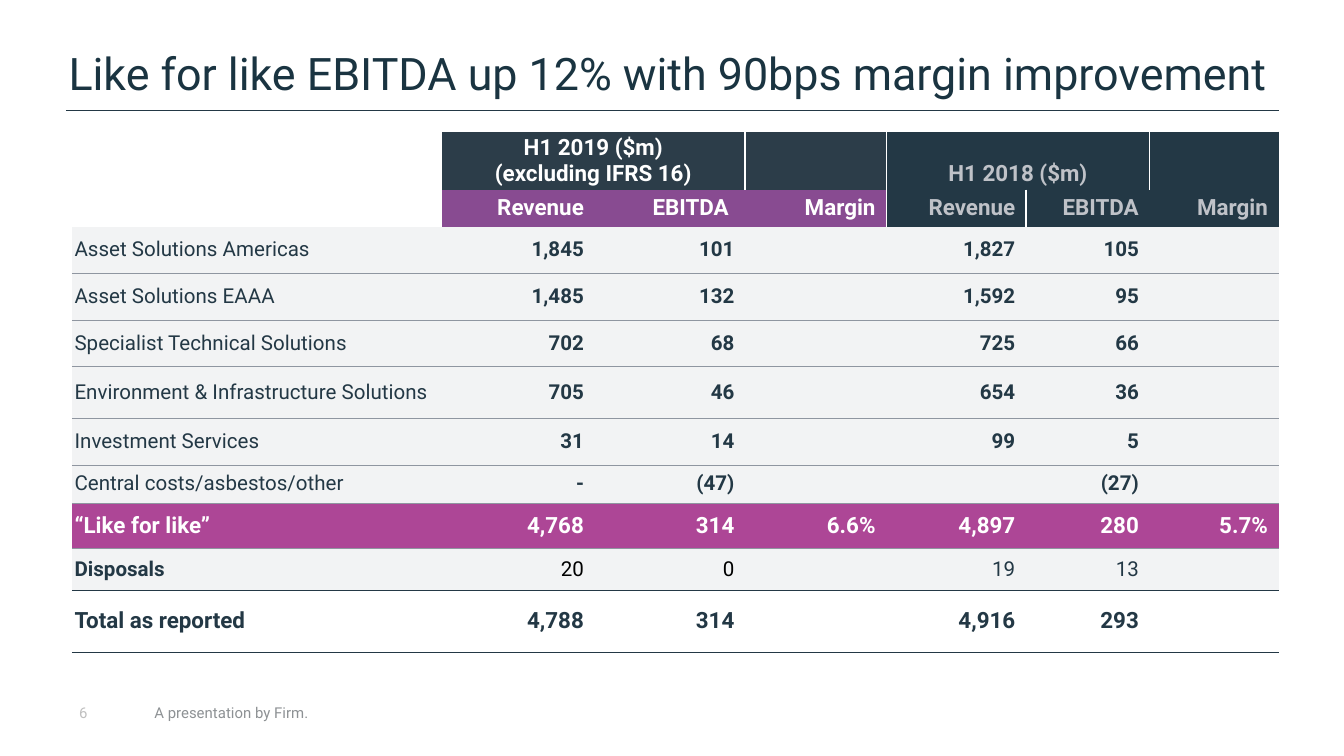
import dataclasses
import typing

import lxml.etree
import pptx
import pptx.dml.color
import pptx.enum.shapes
import pptx.enum.text
import pptx.oxml.ns
import pptx.util

ALIGN = pptx.enum.text.PP_ALIGN
ANCHOR = pptx.enum.text.MSO_ANCHOR
UNIT = pptx.util.Inches(0.1)
Box = tuple[float, float, float, float]


@dataclasses.dataclass(frozen=True)
class Theme:
    font: str = "Roboto"
    title: str = "1A3441"
    navy: str = "233845"
    slate: str = "2C3D49"
    purple: str = "884B91"
    magenta: str = "AD4696"
    pale: str = "F2F3F4"
    white: str = "FFFFFF"
    black: str = "000000"
    silver: str = "BFC2C8"
    rule: str = "8F96A0"
    number: str = "BFBFBF"
    footer: str = "8D9194"
    title_size: int = 24
    head_size: int = 12
    body_size: int = 11
    foot_size: int = 8


T = Theme()


class Edge(typing.NamedTuple):
    color: str
    width: float


HAIR = Edge(T.rule, 0.25)
DARK = Edge(T.navy, 0.5)
DIVIDER = Edge(T.white, 1)
OUTER = Edge(T.navy, 1)


@dataclasses.dataclass(frozen=True)
class Format:
    size: int = T.body_size
    color: str = T.navy
    bold: bool = False


@dataclasses.dataclass(frozen=True)
class Row:
    height: float
    label: str
    values: tuple[str, ...]
    fill: str = T.pale
    label_format: Format = Format()
    value_formats: tuple[Format, Format] = (Format(bold=True),) * 2
    top: Edge | None = HAIR
    bottom: Edge | None = HAIR


WHITE_BOLD = Format(T.head_size, T.white, True)
SILVER_BOLD = Format(T.head_size, T.silver, True)
TOTAL = Format(T.head_size, T.navy, True)

COLUMNS = (27.5, 11.4, 11.2, 10.5, 10.4, 9.2, 9.6)
HEAD_HEIGHTS = (4.25, 2.7)
PERIODS = (
    (1, "H1 2019 ($m)\n(excluding IFRS 16)", T.slate, T.purple, WHITE_BOLD),
    (4, "H1 2018 ($m)", T.navy, T.navy, SILVER_BOLD),
)
MEASURES = ("Revenue", "EBITDA", "Margin")
LAST = len(COLUMNS)
HEAD_EDGES = ({3: DIVIDER, 4: DIVIDER, 6: DIVIDER, LAST: OUTER}, {4: DIVIDER, LAST: OUTER})
ROWS = (
    Row(3.47, "Asset Solutions Americas", ("1,845", "101", "", "1,827", "105", ""), top=None),
    Row(3.47, "Asset Solutions EAAA", ("1,485", "132", "", "1,592", "95", "")),
    Row(3.47, "Specialist Technical Solutions", ("702", "68", "", "725", "66", "")),
    Row(3.87, "Environment & Infrastructure Solutions", ("705", "46", "", "654", "36", "")),
    Row(3.47, "Investment Services", ("31", "14", "", "99", "5", "")),
    Row(2.82, "Central costs/asbestos/other", ("-", "(47)", "", "", "(27)", "")),
    Row(3.37, "“Like for like”", ("4,768", "314", "6.6%", "4,897", "280", "5.7%"),
        T.magenta, WHITE_BOLD, (WHITE_BOLD,) * 2, bottom=None),
    Row(3.12, "Disposals", ("20", "0", "", "19", "13", ""), T.pale, Format(bold=True),
        (Format(color=T.black), Format()), None, DARK),
    Row(4.62, "Total as reported", ("4,788", "314", "", "4,916", "293", ""),
        T.white, TOTAL, (TOTAL,) * 2, DARK, DARK),
)


def units(*values: float) -> list[int]:
    return [round(v * UNIT) for v in values]


def rgb(value: str) -> pptx.dml.color.RGBColor:
    return pptx.dml.color.RGBColor.from_string(value)


def apply(target: typing.Any, values: dict[str, typing.Any]) -> None:
    for name, value in values.items():
        setattr(target, name, value)


def write(tf: typing.Any, text: str, fmt: Format, align: ALIGN = ALIGN.LEFT) -> None:
    for i, line in enumerate(text.split("\n")):
        p = tf.add_paragraph() if i else tf.paragraphs[0]
        p.alignment = align
        if line:
            r = p.add_run()
            r.text = line
            apply(r.font, {"name": T.font, "size": pptx.util.Pt(fmt.size), "bold": fmt.bold})
            r.font.color.rgb = rgb(fmt.color)
        else:
            end = lxml.etree.SubElement(p._p, pptx.oxml.ns.qn("a:endParaRPr"))
            end.set("sz", str(fmt.size * 100))


def draw_edges(cell: typing.Any, edges: dict[str, Edge | None]) -> None:
    tc_pr = cell._tc.get_or_add_tcPr()
    for side in "LRTB":
        edge = edges.get(side)
        if edge:
            ln = lxml.etree.SubElement(tc_pr, pptx.oxml.ns.qn(f"a:ln{side}"))
            ln.set("w", str(pptx.util.Pt(edge.width)))
            solid = lxml.etree.SubElement(ln, pptx.oxml.ns.qn("a:solidFill"))
            lxml.etree.SubElement(solid, pptx.oxml.ns.qn("a:srgbClr")).set("val", edge.color)


def draw_cell(cell: typing.Any, text: str, fmt: Format, fill: str | None, align: ALIGN,
              anchor: ANCHOR, edges: dict[str, Edge | None]) -> None:
    left, right, vertical = (0.6, 0.8, 0.4) if align == ALIGN.RIGHT and text else (0.2,) * 3
    names = ("margin_left", "margin_right", "margin_top", "margin_bottom")
    apply(cell, dict(zip(names, units(left, right, vertical, vertical))))
    cell.vertical_anchor = anchor
    draw_edges(cell, edges)
    if fill:
        cell.fill.solid()
        cell.fill.fore_color.rgb = rgb(fill)
    else:
        cell.fill.background()
    write(cell.text_frame, text, fmt, align)


def draw_head(table: typing.Any) -> None:
    def place(row: int, col: int, text: str, fmt: Format, fill: str | None, align: ALIGN) -> None:
        cell = table.cell(row, col)
        edges = {"L": HEAD_EDGES[row].get(col),
                 "R": HEAD_EDGES[row].get(col + cell.span_width)}
        draw_cell(cell, text, fmt, fill, align, ANCHOR.BOTTOM, edges)

    for row in range(len(HEAD_HEIGHTS)):
        place(row, 0, "", WHITE_BOLD, None, ALIGN.LEFT)
    for first, name, top_fill, fill, fmt in PERIODS:
        table.cell(0, first).merge(table.cell(0, first + 1))
        for i, measure in enumerate(MEASURES):
            place(0, first + i, "" if i else name, fmt, top_fill, ALIGN.CENTER)
            padded = measure + " " if (first, i) == (1, 1) else measure
            place(1, first + i, padded, fmt, fill, ALIGN.RIGHT)


def draw_table(s: typing.Any, left: float, top: float) -> None:
    heights = HEAD_HEIGHTS + tuple(row.height for row in ROWS)
    box = units(left, top, sum(COLUMNS), sum(heights))
    table = s.shapes.add_table(len(heights), len(COLUMNS), *box).table
    apply(table, {"first_row": False, "horz_banding": False})
    style = table._tbl.tblPr.find(pptx.oxml.ns.qn("a:tableStyleId"))
    style.text = "{2D5ABB26-0587-4C30-8999-92F81FD0307C}"
    for column, width in zip(table.columns, units(*COLUMNS)):
        column.width = width
    for row, height in zip(table.rows, units(*heights)):
        row.height = height
    draw_head(table)
    for i, row in enumerate(ROWS, len(HEAD_HEIGHTS)):
        edges = {"T": row.top, "B": row.bottom}
        draw_cell(table.cell(i, 0), row.label, row.label_format, row.fill,
                  ALIGN.LEFT, ANCHOR.MIDDLE, edges)
        for j, value in enumerate(row.values):
            fmt = row.value_formats[j // len(MEASURES)]
            draw_cell(table.cell(i, j + 1), value, fmt, row.fill,
                      ALIGN.RIGHT, ANCHOR.MIDDLE, edges)


def draw_title(s: typing.Any, text: str, box: Box) -> None:
    sp = s.shapes.title
    apply(sp, dict(zip(("left", "top", "width", "height"), units(*box))))
    apply(sp.text_frame, {"margin_left": 0, "margin_right": 0, "margin_top": 0,
                          "margin_bottom": 0, "vertical_anchor": ANCHOR.BOTTOM,
                          "auto_size": pptx.enum.text.MSO_AUTO_SIZE.NONE, "word_wrap": True})
    write(sp.text_frame, text, Format(T.title_size, T.title))


def draw_rule(s: typing.Any, x1: float, x2: float, y: float) -> None:
    line = s.shapes.add_connector(pptx.enum.shapes.MSO_CONNECTOR.STRAIGHT, *units(x1, y, x2, y))
    line.line.color.rgb = rgb(DARK.color)
    line.line.width = pptx.util.Pt(DARK.width)
    lxml.etree.SubElement(line._element.spPr, pptx.oxml.ns.qn("a:effectLst"))


def draw_footer(s: typing.Any, text: str, color: str, box: Box) -> None:
    tf = s.shapes.add_textbox(*units(*box)).text_frame
    apply(tf, {"word_wrap": True, "vertical_anchor": ANCHOR.MIDDLE})
    write(tf, text, Format(T.foot_size, color))


def main() -> None:
    prs = pptx.Presentation()
    prs.slide_width, prs.slide_height = units(100, 56.25)
    s = prs.slides.add_slide(prs.slide_layouts[5])
    draw_rule(s, 4.9, 95.2, 8.2)
    draw_title(s, "Like for like EBITDA up 12% with 90bps margin improvement", (5.1, 2.4, 89.8, 5))
    draw_table(s, 5.35, 9.8)
    draw_footer(s, "6", T.number, (4.9, 52, 5.6, 2.1))
    draw_footer(s, "A presentation by Firm.", T.footer, (10.5, 52, 14.7, 2.1))
    prs.save("out.pptx")


if __name__ == "__main__":
    main()
